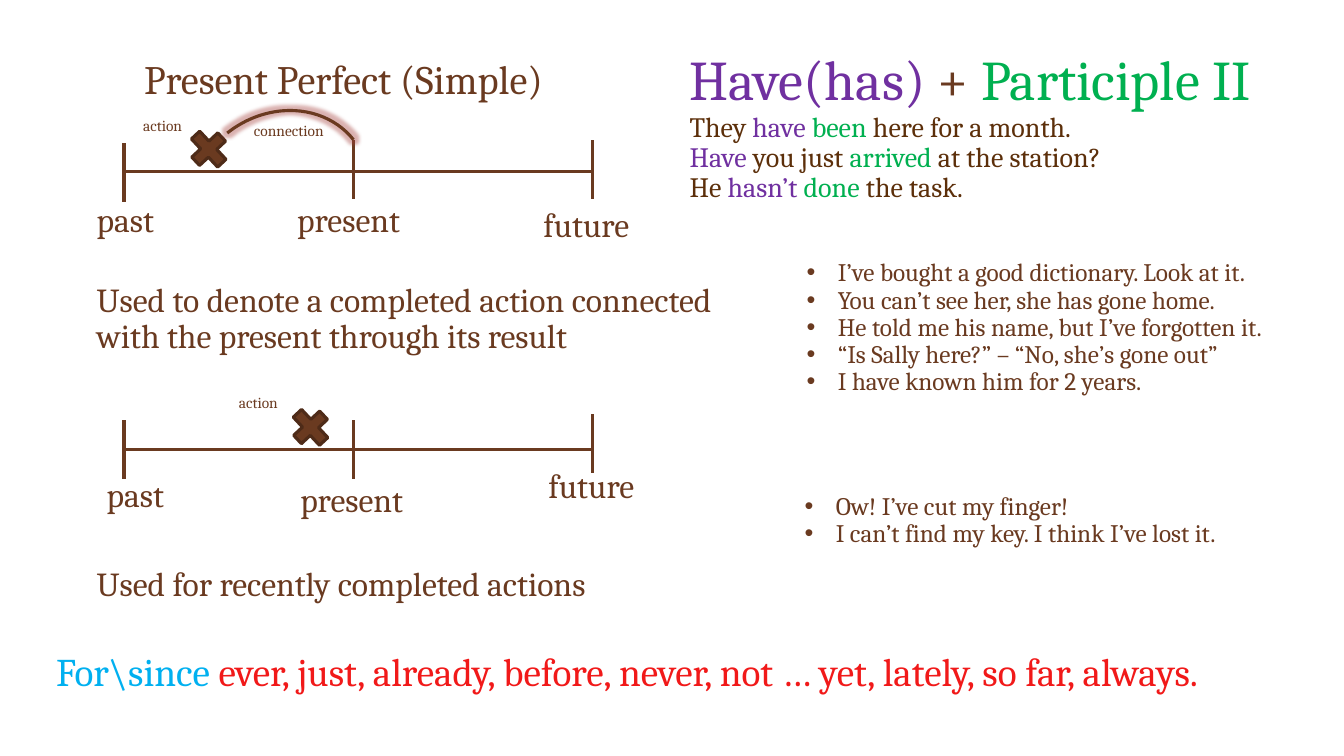
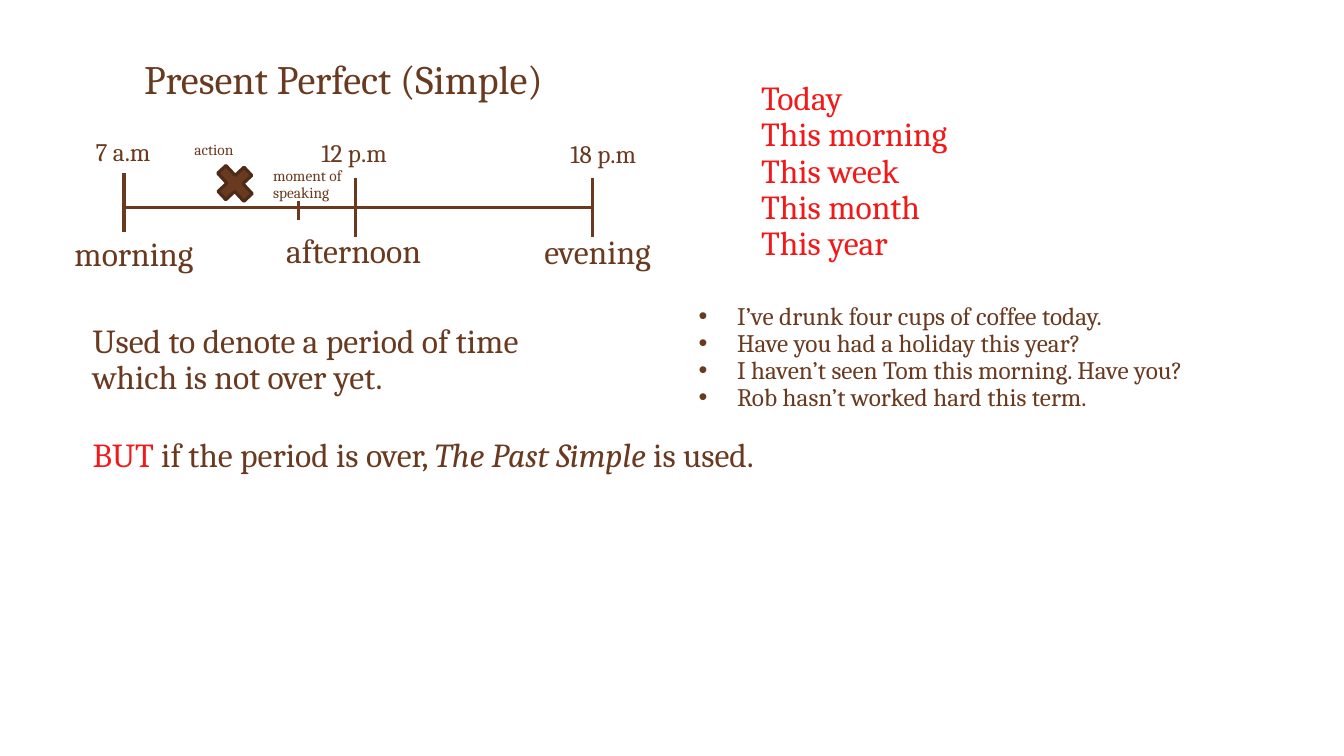
from lxml import etree
from pptx import Presentation
from pptx import util as u
from pptx.dml import color
from pptx.enum import shapes, text
from pptx.oxml import ns

COLORS = {
    "brown": "6A3A20",
    "dark": "4E2B18",
    "example": "5C2F0A",
    "purple": "7030A0",
    "green": "00B050",
    "red": "F11919",
    "blue": "00B0F0",
    "glow": "A5403C",
}
TITLE = "Present Perfect (Simple)"


def rgb(name):
    return color.RGBColor.from_string(COLORS[name])


def px(length):
    return u.Emu(length * 9144)


def add_element(parent, tag, **attributes):
    return etree.SubElement(parent, ns.qn(tag), attributes)


class Deck:
    font = "Cambria"
    line_width = u.Pt(2.25)
    tick_length = 58

    def __init__(self):
        self.presentation = Presentation()
        self.presentation.slide_width = px(1333)
        self.presentation.slide_height = px(750)
        self.slide = None

    def new_slide(self, layout):
        self.slide = self.presentation.slides.add_slide(
            self.presentation.slide_layouts[layout])
        title = self.slide.shapes.title
        self.place(title, 133, 47, 478, 60)
        frame = title.text_frame
        frame.auto_size = text.MSO_AUTO_SIZE.NONE
        frame.vertical_anchor = text.MSO_ANCHOR.BOTTOM
        paragraph = frame.paragraphs[0]
        paragraph.alignment = text.PP_ALIGN.LEFT
        self.add_run(paragraph, TITLE, "brown", 28.8)

    def place(self, shape, left, top, width, height):
        shape.left, shape.top = px(left), px(top)
        shape.width, shape.height = px(width), px(height)

    def add_run(self, paragraph, words, ink, size, italic=False):
        run = paragraph.add_run()
        run.text = words
        run.font.name = self.font
        run.font.size = u.Pt(size)
        run.font.color.rgb = rgb(ink)
        if italic:
            run.font.italic = True

    def fill_text(self, frame, lines, size, ink="brown", indent=0):
        frame.word_wrap = True
        for index, line in enumerate(lines):
            paragraph = frame.add_paragraph() if index else frame.paragraphs[0]
            if indent:
                properties = paragraph._p.get_or_add_pPr()
                properties.set("marL", str(px(indent)))
                properties.set("indent", str(-px(indent)))
                add_element(properties, "a:buFont", typeface="Arial")
                add_element(properties, "a:buChar", char="•")
            paragraph.line_spacing = 0.9
            paragraph.space_before = u.Pt(0)
            runs = [(line, ink)] if isinstance(line, str) else line
            for words, run_ink, *rest in runs:
                run_size = rest[0] if rest else size
                self.add_run(paragraph, words, run_ink, run_size, *rest[1:])

    def text_box(self, left, top, width, height, lines, size=24, ink="brown"):
        box = self.slide.shapes.add_textbox(px(left), px(top), px(width), px(height))
        self.fill_text(box.text_frame, lines, size, ink)
        box.text_frame.auto_size = text.MSO_AUTO_SIZE.SHAPE_TO_FIT_TEXT

    def bullets(self, index, left, top, width, height, lines, indent):
        body = self.slide.placeholders[index]
        self.place(body, left, top, width, height)
        body.text_frame.auto_size = text.MSO_AUTO_SIZE.NONE
        self.fill_text(body.text_frame, lines, 18, indent=indent)

    def note(self, left, top, words, width=75, height=27):
        self.text_box(left, top, width, height, [words], 11)

    def line(self, x1, y1, x2, y2):
        connector = self.slide.shapes.add_connector(
            shapes.MSO_CONNECTOR.STRAIGHT, px(x1), px(y1), px(x2), px(y2))
        connector.line.color.rgb = rgb("brown")
        connector.line.width = self.line_width
        add_element(connector._element.spPr, "a:effectLst")

    def timeline(self, y, ticks, labels):
        self.line(ticks[0][0], y, ticks[-1][0], y)
        for x, top in ticks:
            self.line(x, top, x, top + self.tick_length)
        for words, left, top, width in labels:
            self.text_box(left, top, width, 46, [words])

    def outlined(self, kind, left, top, width, height, rotation, ink):
        shape = self.slide.shapes.add_shape(
            kind, px(left), px(top), px(width), px(height))
        shape.rotation = rotation
        shape.shadow.inherit = False
        shape.line.color.rgb = rgb(ink)
        shape.line.width = self.line_width
        return shape

    def cross(self, left, top):
        shape = self.outlined(
            shapes.MSO_SHAPE.MATH_PLUS, left, top, 52, 48, 47, "dark")
        shape.fill.solid()
        shape.fill.fore_color.rgb = rgb("brown")

    def glowing_arc(self, left, top, width, height, rotation):
        arc = self.outlined(
            shapes.MSO_SHAPE.ARC, left, top, width, height, rotation, "brown")
        arc.fill.background()
        effects = arc._element.spPr.find(ns.qn("a:effectLst"))
        glow = add_element(effects, "a:glow", rad="63500")
        tint = add_element(glow, "a:srgbClr", val=COLORS["glow"])
        add_element(tint, "a:alpha", val="40000")


def result_slide(deck):
    deck.new_slide(3)
    deck.text_box(674, 47, 608, 162, [
        [("Have(has)", "purple", 40), (" + ", "brown", 40),
         ("Participle II", "green", 40)],
        [("They ", "example"), ("have ", "purple"), ("been", "green"),
         (" here for a month.", "example")],
        [("Have", "purple"), (" you just ", "example"), ("arrived", "green"),
         (" at the station?", "example")],
        [("He ", "example"), ("hasn’t ", "purple"), ("done", "green"),
         (" the task.", "example")],
    ], 20)
    deck.timeline(170, [(123, 142), (351, 139), (588, 139)], [
        ("past", 86, 197, 94), ("present", 285, 197, 134), ("future", 529, 202, 118)])
    deck.cross(181, 124)
    deck.glowing_arc(183, 114, 188, 166, 321.6)
    deck.note(132, 112, "action")
    deck.note(242, 117, "connection", 108)
    deck.text_box(86, 276, 675, 83, [
        "Used to denote a completed action connected",
        "with the present through its result"])

    deck.timeline(446, [(123, 417), (351, 417), (588, 411)], [
        ("past", 96, 470, 94), ("present", 288, 475, 134), ("future", 534, 461, 118)])
    deck.cross(282, 400)
    deck.note(227, 387, "action")
    deck.text_box(86, 558, 549, 46, ["Used for recently completed actions"])

    deck.bullets(1, 790, 253, 483, 174, [
        "I’ve bought a good dictionary. Look at it.",
        "You can’t see her, she has gone home.",
        "He told me his name, but I’ve forgotten it.",
        "“Is Sally here?” – “No, she’s gone out”",
        "I have known him for 2 years.",
    ], 31)
    deck.bullets(2, 788, 485, 472, 92, [
        "Ow! I’ve cut my finger!",
        "I can’t find my key. I think I’ve lost it.",
    ], 31)
    deck.text_box(46, 643, 1236, 53, [[
        ("For\\since", "blue"),
        (" ever, just, already, before, never, not … yet, lately, so far, always.",
         "red")]], 28)


def period_slide(deck):
    deck.new_slide(1)
    deck.timeline(206, [(123, 172), (353, 177), (588, 177)], [
        ("morning", 64, 231, 147), ("afternoon", 274, 228, 177),
        ("evening", 530, 229, 154)])
    for hour, left, top in [("7 a.m", 85, 134), ("12 p.m", 309, 135),
                            ("18 p.m", 556, 136)]:
        deck.text_box(left, top, 96, 37, [hour], 18)
    deck.cross(207, 158)
    deck.note(183, 136, "action")
    deck.line(296, 199, 296, 218)
    deck.note(261, 162, "moment of speaking", 101, 43)
    deck.text_box(82, 317, 505, 83, [
        "Used to denote a period of time", "which is not over yet."])
    deck.text_box(745, 76, 472, 192, [
        "Today", "This morning", "This week", "This month", "This year"], ink="red")
    deck.bullets(1, 683, 296, 543, 119, [
        "I’ve drunk four cups of coffee today.",
        "Have you had a holiday this year?",
        "I haven’t seen Tom this morning. Have you?",
        "Rob hasn’t worked hard this term.",
    ], 38)
    deck.text_box(82, 430, 857, 46, [[
        ("BUT ", "red"), ("if the period is over, ", "brown"),
        ("The Past Simple ", "brown", 24, True), ("is used.", "brown")]])


def main():
    deck = Deck()
    result_slide(deck)
    period_slide(deck)
    deck.presentation.save("out.pptx")


if __name__ == "__main__":
    main()
